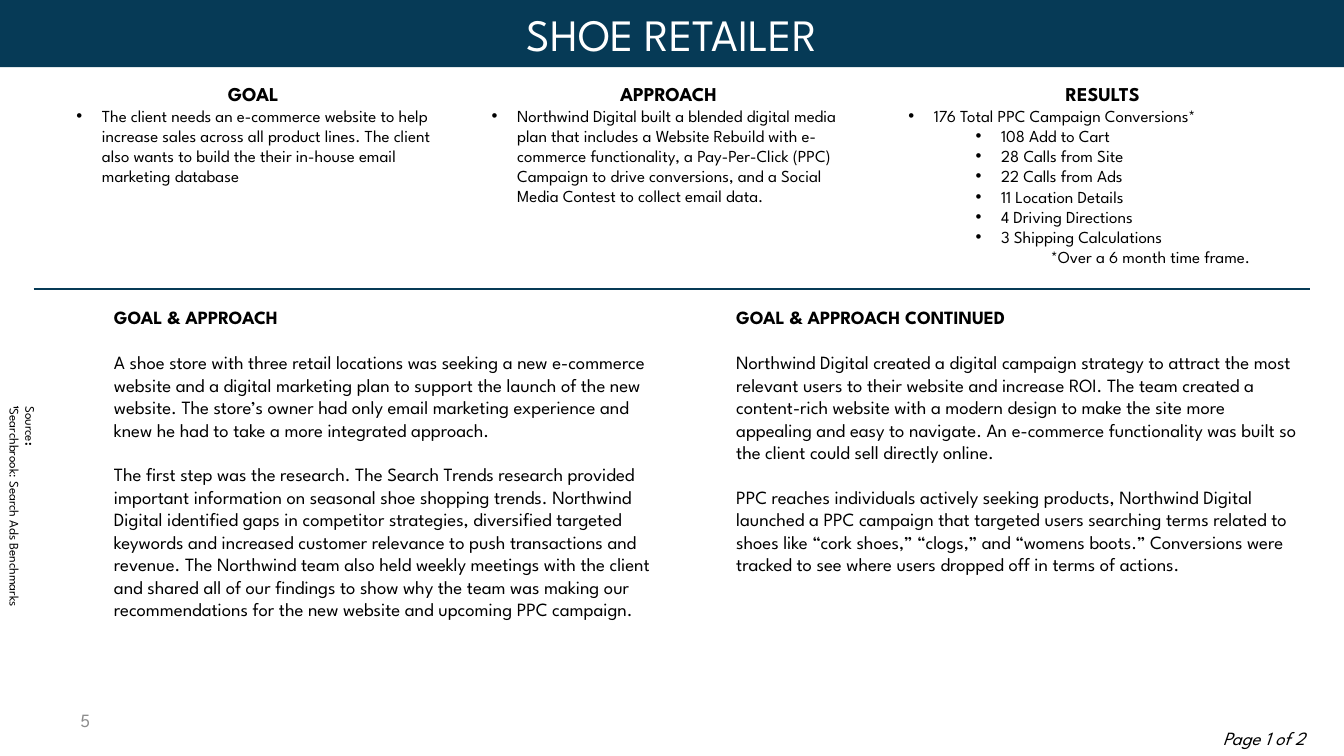
"""Build the shoe retailer case study slide."""
from lxml import etree
from pptx import Presentation
from pptx.dml.color import RGBColor
from pptx.enum.shapes import MSO_CONNECTOR
from pptx.enum.text import MSO_ANCHOR, PP_ALIGN
from pptx.oxml.ns import qn
from pptx.util import Inches, Pt

NAVY = RGBColor(0x06, 0x3A, 0x56)
BLACK = RGBColor(0, 0, 0)
WHITE = RGBColor(0xFF, 0xFF, 0xFF)
GRAY = RGBColor(0x8C, 0x8C, 0x8C)
FONT = "League Spartan"
CENTER = PP_ALIGN.CENTER
MIDDLE = MSO_ANCHOR.MIDDLE
LINE = MSO_CONNECTOR.STRAIGHT


def add_box(left, top, width, height):
    box = slide.shapes.add_textbox(Inches(left), Inches(top), Inches(width), Inches(height))
    box.text_frame.word_wrap = True
    return box


def add_run(para, text, size, color=BLACK, bold=False):
    run = para.add_run()
    run.text = text
    run.font.name = FONT
    run.font.size = Pt(size)
    run.font.color.rgb = color
    run.font.bold = bold
    return run


prs = Presentation()
prs.slide_width = Inches(10)
prs.slide_height = Inches(10) * 9 // 16
slide = prs.slides.add_slide(prs.slide_layouts[5])

title = slide.shapes.title
title.left, title.top = Inches(0), Inches(0)
title.width, title.height = Inches(10), Inches(0.5)
title.fill.solid()
title.fill.fore_color.rgb = NAVY
title.text_frame.vertical_anchor = MIDDLE
head = title.text_frame.paragraphs[0]
head.alignment = CENTER
add_run(head, "SHOE RETAILER", 24, WHITE)

rule = slide.shapes.add_connector(LINE, Inches(0.25), Inches(2.15), Inches(9.75), Inches(2.15))
rule.line.color.rgb = NAVY
rule.line.width = Pt(1.5)
etree.SubElement(rule._element.spPr, qn("a:effectLst"))

columns = [
    (0.47, 2.83, 1.38, "GOAL", [
        (0, "The client needs an e-commerce website to help increase sales across all "
            "product lines. The client also wants to build the their in-house email "
            "marketing database")]),
    (3.56, 2.83, 1.36, "APPROACH", [
        (0, "Northwind Digital built a blended digital media plan that includes a Website "
            "Rebuild with e-commerce functionality, a Pay-Per-Click (PPC) Campaign to drive "
            "conversions, and a Social Media Contest to collect email data.")]),
    (6.66, 3.09, 1.51, "RESULTS", [
        (0, "176 Total PPC Campaign Conversions*"),
        (1, "108 Add to Cart"),
        (1, "28 Calls from Site"),
        (1, "22 Calls from Ads"),
        (1, "11 Location Details"),
        (1, "4 Driving Directions"),
        (1, "3 Shipping Calculations")]),
]
for left, width, height, label, items in columns:
    frame = add_box(left, 0.56, width, height).text_frame
    para = frame.paragraphs[0]
    para.alignment = CENTER
    add_run(para, label, 10.5, bold=True)
    for level, text in items:
        para = frame.add_paragraph()
        para.level = level
        props = para._p.get_or_add_pPr()
        props.set("marL", str(Inches(0.19 + 0.5 * level)))
        props.set("indent", str(Inches(-0.19)))
        etree.SubElement(props, qn("a:buFont"), typeface="Arial")
        etree.SubElement(props, qn("a:buChar"), char="•")
        add_run(para, text, 9)

note = frame.add_paragraph()
note.level = 1
props = note._p.get_or_add_pPr()
props.set("marL", str(Inches(1.06)))
props.set("indent", "0")
add_run(note, "*Over a 6 month time frame.", 9)

stories = [
    (0.75, 4.33, 2.96, "GOAL & APPROACH", [
        "A shoe store with three retail locations was seeking a new e-commerce website and "
        "a digital marketing plan to support the launch of the new website. The store’s "
        "owner had only email marketing experience and knew he had to take a more "
        "integrated approach.",
        "The first step was the research. The Search Trends research provided important "
        "information on seasonal shoe shopping trends. Northwind Digital identified gaps in "
        "competitor strategies, diversified targeted keywords and increased customer "
        "relevance to push transactions and revenue. The Northwind team also held weekly "
        "meetings with the client and shared all of our findings to show why the team was "
        "making our recommendations for the new website and upcoming PPC campaign."]),
    (5.38, 4.37, 2.63, "GOAL & APPROACH CONTINUED", [
        "Northwind Digital created a digital campaign strategy to attract the most relevant "
        "users to their website and increase ROI. The team created a content-rich website "
        "with a modern design to make the site more appealing and easy to navigate. An "
        "e-commerce functionality was built so the client could sell directly online.",
        "PPC reaches individuals actively seeking products, Northwind Digital launched a PPC "
        "campaign that targeted users searching terms related to shoes like “cork shoes,” "
        "“clogs,” and “womens boots.” Conversions were tracked to see where users dropped "
        "off in terms of actions."]),
]
for left, width, height, label, texts in stories:
    frame = add_box(left, 2.23, width, height).text_frame
    add_run(frame.paragraphs[0], label, 10, bold=True)
    for text in texts:
        para = frame.add_paragraph()
        para.space_before = Pt(12)
        add_run(para, text, 10)

source = add_box(-0.86, 3.78, 2.05, 0.34)
source.rotation = 90
frame = source.text_frame
frame.word_wrap = False
para = frame.paragraphs[0]
add_run(para, "Source", 7)
add_run(para, ":", 7, bold=True)
para = frame.add_paragraph()
mark = add_run(para, "1", 7, bold=True)
mark.font._element.set("baseline", "30000")
add_run(para, "Searchbrook: Search Ads Benchmarks", 7)

number = add_box(0.5, 5.21, 2.33, 0.3).text_frame
number.vertical_anchor = MIDDLE
add_run(number.paragraphs[0], "5", 10, GRAY)

page = add_box(9, 5.36, 1, 0.27).text_frame
add_run(page.paragraphs[0], "Page 1 of 2", 10).font.italic = True

prs.save("out.pptx")
